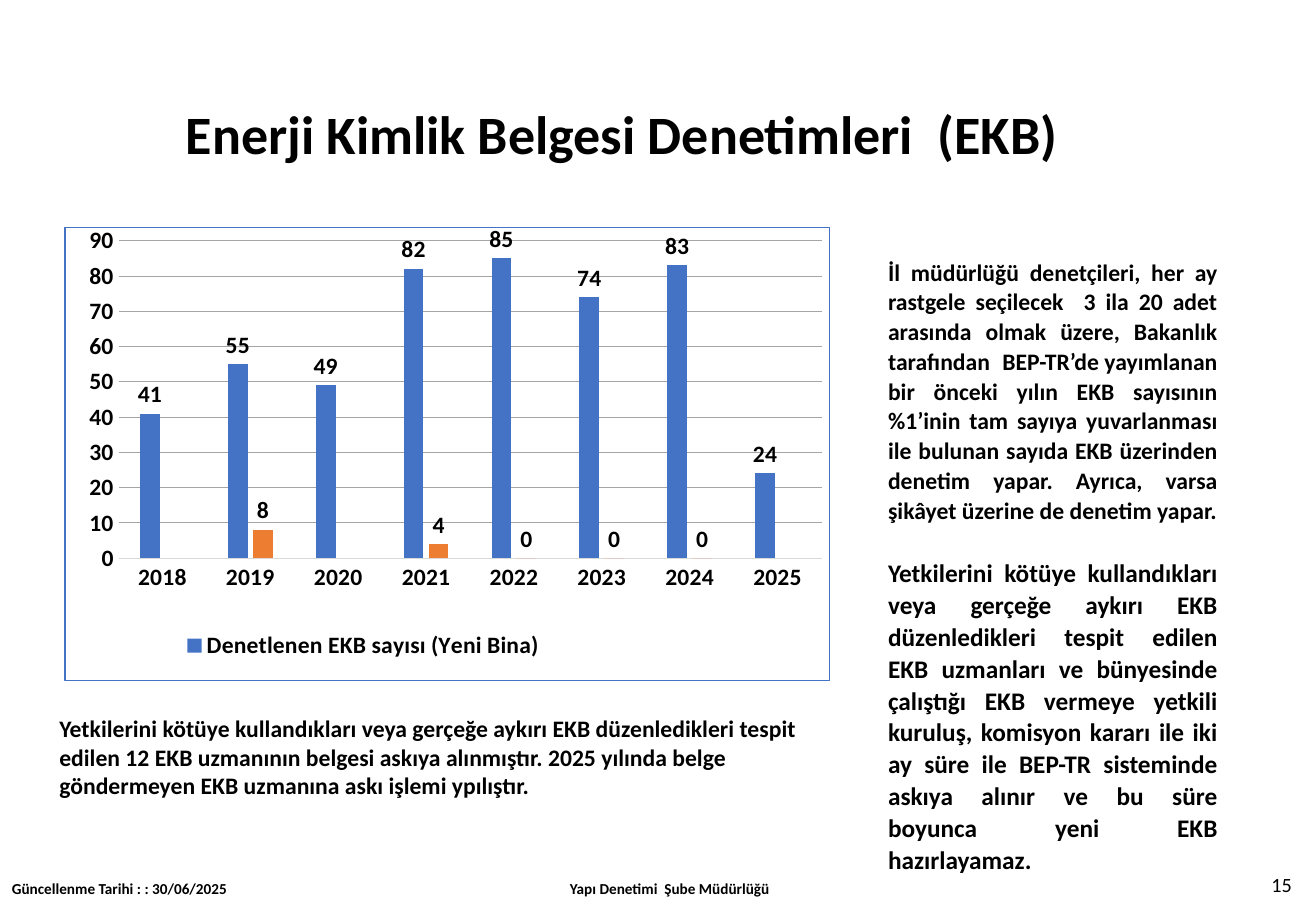
from lxml import etree
from pptx import Presentation
from pptx.chart import data
from pptx.dml import color
from pptx.enum import chart as charts, text
from pptx.oxml import ns, parse_xml
from pptx.util import Inches, Pt

COLORS = {"text": "000000", "audited": "4472C4", "suspended": "ED7D31",
          "grid": "A5A5A5", "axis": "D9D9D9"}
FONT = "Calibri"
YEARS = [str(year) for year in range(2018, 2026)]
SERIES = [
    ("Denetlenen EKB sayısı (Yeni Bina)", "audited",
     [41, 55, 49, 82, 85, 74, 83, 24]),
    ("", "suspended", [None, 8, None, 4, 0, 0, 0, None]),
]
RULES = [
    ("İl müdürlüğü denetçileri, her ay rastgele seçilecek  3 ila 20 adet arasında "
     "olmak üzere, Bakanlık tarafından BEP-TR’de\u00a0yayımlanan bir önceki yılın EKB "
     "sayısının %1’inin tam sayıya yuvarlanması ile bulunan sayıda EKB üzerinden "
     "denetim yapar. Ayrıca, varsa şikâyet üzerine de denetim yapar.", 14),
    ("Yetkilerini kötüye kullandıkları veya gerçeğe aykırı EKB düzenledikleri tespit "
     "edilen EKB uzmanları ve bünyesinde çalıştığı EKB vermeye yetkili kuruluş, "
     "komisyon kararı ile iki ay süre ile BEP-TR sisteminde askıya alınır ve bu süre "
     "boyunca yeni EKB hazırlayamaz.", 15),
]
RESULT = ("Yetkilerini kötüye kullandıkları veya gerçeğe aykırı EKB düzenledikleri "
          "tespit edilen 12 EKB uzmanının belgesi askıya alınmıştır. 2025 yılında "
          "belge göndermeyen EKB uzmanına askı işlemi ypılıştır.")


def rgb(name):
    return color.RGBColor.from_string(COLORS[name])


def set_font(font, size, bold=True):
    font.name = FONT
    font.size = Pt(size)
    font.bold = bold
    font.color.rgb = rgb("text")


def inches(box):
    return [Inches(length) for length in box]


def add_title(slide, box):
    title = slide.shapes.title
    title.left, title.top, title.width, title.height = inches(box)
    title.text_frame.text = "Enerji Kimlik Belgesi Denetimleri  (EKB)"
    title.text_frame.vertical_anchor = text.MSO_ANCHOR.MIDDLE
    paragraph = title.text_frame.paragraphs[0]
    paragraph.alignment = text.PP_ALIGN.LEFT
    paragraph.line_spacing = 0.9
    set_font(paragraph.font, 32)


def add_text(slide, box, entries, align=text.PP_ALIGN.LEFT, bold=True, wrap=True,
             anchor=text.MSO_ANCHOR.TOP, line_spacing=None, gap=0):
    frame = slide.shapes.add_textbox(*inches(box)).text_frame
    frame.word_wrap = wrap
    frame.vertical_anchor = anchor
    for index, (wording, size) in enumerate(entries):
        paragraph = frame.add_paragraph() if index else frame.paragraphs[0]
        paragraph.text = wording
        paragraph.alignment = align
        if line_spacing:
            paragraph.line_spacing = line_spacing
        if index:
            paragraph.space_before = Pt(gap)
        set_font(paragraph.font, size, bold)


def make_layout(**values):
    layout = etree.Element(ns.qn("c:layout"))
    manual = etree.SubElement(layout, ns.qn("c:manualLayout"))
    for tag, value in values.items():
        etree.SubElement(manual, ns.qn(f"c:{tag}")).set("val", str(value))
    return parse_xml(etree.tostring(layout))


def drop_layout(element):
    for layout in element.findall(ns.qn("c:layout")):
        element.remove(layout)


def format_axes(chart):
    values, years = chart.value_axis, chart.category_axis
    for axis in (values, years):
        axis.major_tick_mark = axis.minor_tick_mark = charts.XL_TICK_MARK.NONE
        set_font(axis.tick_labels.font, 14)
    values.minimum_scale, values.maximum_scale, values.major_unit = 0, 90, 10
    values.format.line.fill.background()
    values.major_gridlines.format.line.color.rgb = rgb("grid")
    values.major_gridlines.format.line.width = Pt(0.5)
    years.format.line.color.rgb = rgb("axis")
    years.format.line.width = Pt(0.75)


def format_legend(chart):
    chart.has_legend = True
    legend = chart.legend
    legend.position = charts.XL_LEGEND_POSITION.BOTTOM
    legend.include_in_layout = False
    set_font(legend.font, 14)
    element = legend._element
    drop_layout(element)
    entry = parse_xml(f'<c:legendEntry {ns.nsdecls("c")}><c:idx val="1"/>'
                      '<c:delete val="1"/></c:legendEntry>')
    position = element.find(ns.qn("c:legendPos"))
    position.addnext(entry)
    entry.addnext(make_layout(xMode="edge", yMode="edge", x=0.15, y=0.88))


def add_border(chart):
    space = chart._chartSpace
    border = parse_xml(
        f'<c:spPr {ns.nsdecls("c", "a")}><a:noFill/><a:ln w="{Pt(0.75)}"><a:solidFill>'
        f'<a:srgbClr val="{COLORS["audited"]}"/></a:solidFill></a:ln></c:spPr>')
    space.find(ns.qn("c:chart")).addnext(border)


def add_audit_chart(slide, box):
    chart_data = data.CategoryChartData()
    chart_data.categories = YEARS
    for name, _, values in SERIES:
        chart_data.add_series(name, values)
    chart = slide.shapes.add_chart(charts.XL_CHART_TYPE.COLUMN_CLUSTERED,
                                   *inches(box), chart_data).chart
    chart.has_title = False
    set_font(chart.font, 14)
    plot = chart.plots[0]
    plot.gap_width, plot.overlap = 219, -27
    plot.vary_by_categories = False
    for series, (_, fill, _) in zip(plot.series, SERIES):
        series.format.fill.solid()
        series.format.fill.fore_color.rgb = rgb(fill)
        labels = series.data_labels
        labels.show_value = True
        labels.position = charts.XL_LABEL_POSITION.OUTSIDE_END
        set_font(labels.font, 14)
    format_axes(chart)
    format_legend(chart)
    add_border(chart)
    plot_area = chart._chartSpace.find(".//" + ns.qn("c:plotArea"))
    drop_layout(plot_area)
    plot_area.insert(0, make_layout(layoutTarget="inner", xMode="edge", yMode="edge",
                                    x=0.07, y=0.03, w=0.92, h=0.7))


def add_footer(slide, box):
    left, top, width, height = box
    add_text(slide, (left, top + 0.11, 2, height),
             [("Güncellenme Tarihi : : 30/06/2025", 9)], wrap=False)
    add_text(slide, (left + 3.94, top + 0.11, 3.14, 0.25),
             [("Yapı Denetimi  Şube Müdürlüğü", 9)], align=text.PP_ALIGN.CENTER)
    add_text(slide, (left + width - 2.44, top, 2.44, height), [("15", 12)],
             align=text.PP_ALIGN.RIGHT, bold=False, anchor=text.MSO_ANCHOR.MIDDLE)


def main():
    presentation = Presentation()
    presentation.slide_width = Inches(10.83)
    presentation.slide_height = Inches(7.5)
    slide = presentation.slides.add_slide(presentation.slide_layouts[5])
    add_audit_chart(slide, (0.53, 1.85, 6.3, 3.76))
    add_title(slide, (1.43, 0.4, 7.57, 1.45))
    add_text(slide, (7.21, 2.06, 2.91, 5.24), RULES, align=text.PP_ALIGN.JUSTIFY,
             line_spacing=1.05, gap=19)
    add_text(slide, (0.39, 5.83, 6.44, 0.81), [(RESULT, 14)])
    add_footer(slide, (0, 7.08, 10.73, 0.4))
    presentation.save("out.pptx")


if __name__ == "__main__":
    main()
